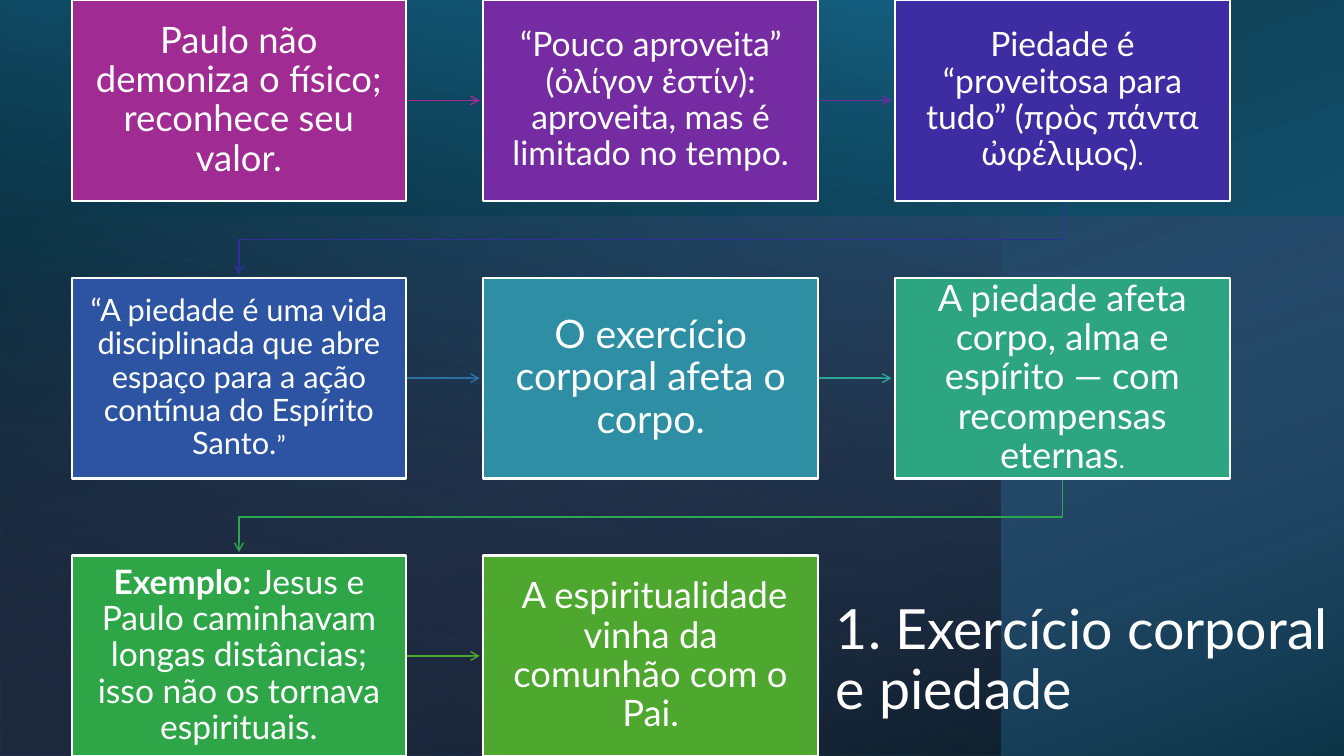
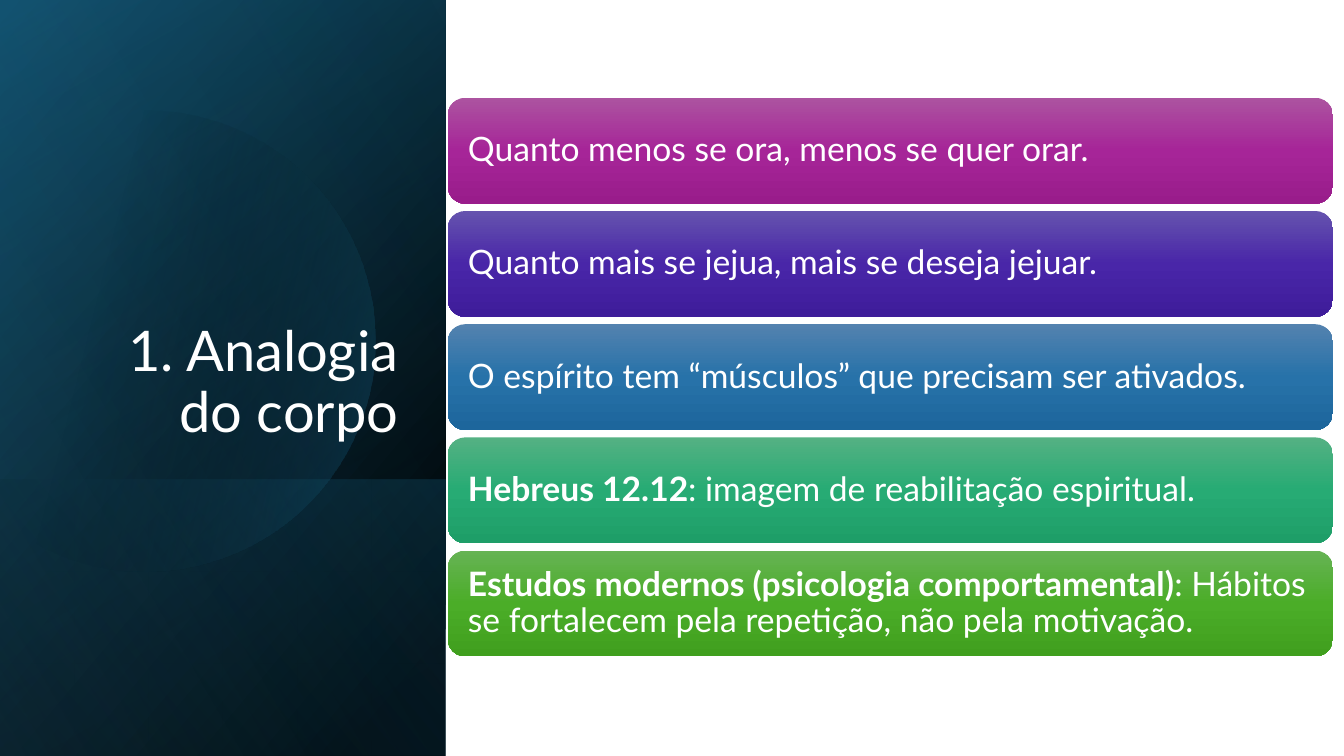
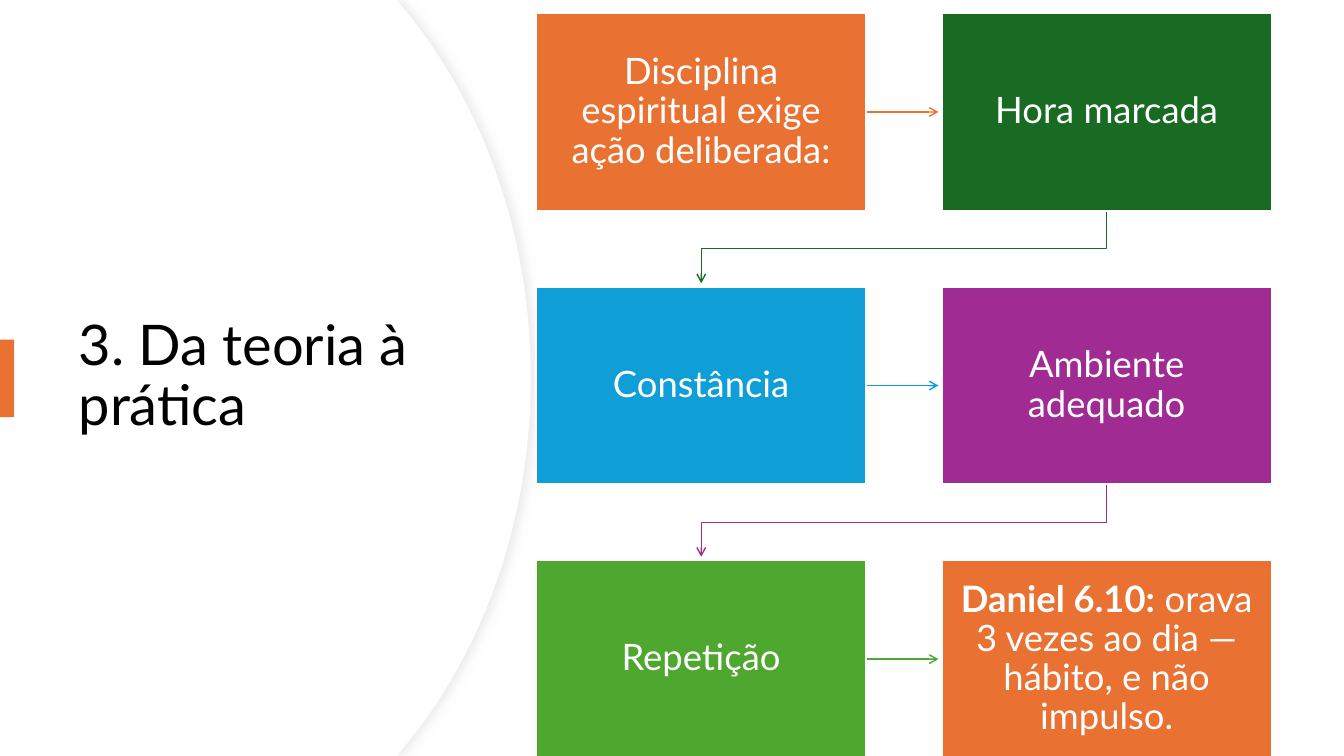
from lxml.etree import SubElement
from pptx import Presentation
from pptx.dml.color import RGBColor
from pptx.enum.shapes import MSO_CONNECTOR as Connector, MSO_SHAPE as Preset
from pptx.enum.text import MSO_ANCHOR as Anchor, MSO_AUTO_SIZE as AutoSize, PP_ALIGN as Align
from pptx.oxml.ns import qn
from pptx.util import Inches, Pt

FONT = "Lato"
CELL = 0.1
COLUMNS, ROWS = 133.3, 75
CURVE_STEPS = 24

WHITE = RGBColor(0xFF, 0xFF, 0xFF)
BLACK = RGBColor(0x00, 0x00, 0x00)
OCEAN = RGBColor(0x15, 0x60, 0x82)
DEEP_OCEAN = RGBColor(0x0B, 0x30, 0x41)
DARK_OCEAN = RGBColor(0x10, 0x48, 0x62)
PALE_SKY = RGBColor(0x46, 0xB1, 0xE1)
PINK = RGBColor(0xD8, 0x6E, 0xCC)
EDGE_GRAY = RGBColor(0xEF, 0xEF, 0xEF)
SHADOW_GRAY = RGBColor(0xD9, 0xD9, 0xD9)
ORANGE = RGBColor(0xE9, 0x71, 0x32)
FOREST = RGBColor(0x19, 0x6B, 0x24)
SKY = RGBColor(0x0F, 0x9E, 0xD5)
MAGENTA = RGBColor(0xA0, 0x2B, 0x93)
PURPLE = RGBColor(0x75, 0x2B, 0xA1)
INDIGO = RGBColor(0x3D, 0x2C, 0xA2)
BLUE = RGBColor(0x2C, 0x54, 0xA3)
TEAL = RGBColor(0x2D, 0x8E, 0xA4)
JADE = RGBColor(0x2D, 0xA5, 0x81)
EMERALD = RGBColor(0x2E, 0xA6, 0x48)
GREEN = RGBColor(0x4E, 0xA7, 0x2E)
PURPLE_ARROW = RGBColor(0x6C, 0x2B, 0xA1)
INDIGO_ARROW = RGBColor(0x2C, 0x2E, 0xA2)
BLUE_ARROW = RGBColor(0x2C, 0x71, 0xA4)
TEAL_ARROW = RGBColor(0x2D, 0xA5, 0x94)
JADE_ARROW = RGBColor(0x2D, 0xA6, 0x51)
MAGENTA_BAR = RGBColor(0xAC, 0x53, 0xA0), RGBColor(0xA6, 0x25, 0x98), RGBColor(0x99, 0x1C, 0x8B)
INDIGO_BAR = RGBColor(0x65, 0x53, 0xAE), RGBColor(0x49, 0x26, 0xA8), RGBColor(0x3E, 0x1C, 0x9A)
BLUE_BAR = RGBColor(0x53, 0x82, 0xAF), RGBColor(0x27, 0x72, 0xA9), RGBColor(0x1D, 0x66, 0x9C)
JADE_BAR = RGBColor(0x54, 0xB1, 0x83), RGBColor(0x27, 0xAB, 0x74), RGBColor(0x1E, 0x9E, 0x68)
GREEN_BAR = RGBColor(0x66, 0xB3, 0x54), RGBColor(0x4B, 0xAD, 0x28), RGBColor(0x40, 0x9F, 0x1E)


def cells(*counts):
    return [Inches(count * CELL) for count in counts]


def write(frame, *parts, size=24, color=WHITE, align=Align.LEFT, anchor=Anchor.MIDDLE, insets=(1, 0.5, 1, 0.5)):
    frame.word_wrap = True
    frame.auto_size = AutoSize.NONE
    frame.vertical_anchor = anchor
    frame.margin_left, frame.margin_top, frame.margin_right, frame.margin_bottom = cells(*insets)
    paragraph = frame.paragraphs[0]
    paragraph.alignment = align
    paragraph.line_spacing = 0.9
    for part in parts:
        text, changes = part if isinstance(part, tuple) else (part, {})
        for number, line in enumerate(text.split("\n")):
            if number:
                paragraph.add_line_break()
            run = paragraph.add_run()
            run.text = line
            run.font.name = FONT
            run.font.size = Pt(changes.get("size", size))
            run.font.bold = changes.get("bold", False)
            run.font.color.rgb = color


def add_color(parent, color, opacity):
    node = SubElement(parent, qn("a:srgbClr"), val=str(color))
    if opacity < 100:
        SubElement(node, qn("a:alpha"), val=str(opacity * 1000))


def curve(start, first, second, end):
    for step in range(1, CURVE_STEPS + 1):
        t = step / CURVE_STEPS
        weights = (1 - t) ** 3, 3 * t * (1 - t) ** 2, 3 * t ** 2 * (1 - t), t ** 3
        yield tuple(sum(weight * point[axis] for weight, point in zip(weights, (start, first, second, end)))
                    for axis in (0, 1))


class Deck:
    def __init__(self):
        self.presentation = Presentation()
        self.presentation.slide_width, self.presentation.slide_height = cells(COLUMNS, ROWS)
        self.slide = None

    def start_slide(self):
        self.slide = self.presentation.slides.add_slide(self.presentation.slide_layouts[5])

    def title(self, box, text, **style):
        shape = self.slide.shapes.title
        shape.left, shape.top, shape.width, shape.height = cells(*box)
        self.slide.shapes._spTree.append(shape._element)
        write(shape.text_frame, text, **{"size": 40, **style})

    def finish(self, shape, fill=None, line=None, line_width=1.5):
        shape.shadow.inherit = False
        if fill is None:
            shape.fill.background()
        else:
            shape.fill.solid()
            shape.fill.fore_color.rgb = fill
        if line is None:
            shape.line.fill.background()
        else:
            shape.line.color.rgb = line
            shape.line.width = Pt(line_width)
        return shape

    def box(self, box, fill=None, line=None, preset=Preset.RECTANGLE):
        return self.finish(self.slide.shapes.add_shape(preset, *cells(*box)), fill, line)

    def gradient(self, shape, angle, *stops):
        shape.fill.gradient()
        shape.fill.gradient_angle = 360 - angle
        stop_list = shape._element.spPr.find(qn("a:gradFill")).find(qn("a:gsLst"))
        stop_list.clear()
        for position, color, opacity in stops:
            add_color(SubElement(stop_list, qn("a:gs"), pos=str(position * 1000)), color, opacity)

    def wash(self, box, rotation, angle, *stops):
        left, top, width, height = box
        if rotation % 180:
            shift = (width - height) / 2
            left, top, width, height = left + shift, top - shift, height, width
        shape = self.box((left, top, width, height))
        shape.rotation = rotation
        shape._element.spPr.find(qn("a:xfrm")).set("flipH", "1")
        self.gradient(shape, angle, *stops)

    def outline(self, start, *segments, close=True, **style):
        points = [start]
        for segment in segments:
            points += curve(points[-1], *segment) if len(segment) == 3 else segment
        points = [cells(*point) for point in points]
        builder = self.slide.shapes.build_freeform(*points[0])
        builder.add_line_segments(points[1:], close=close)
        return self.finish(builder.convert_to_shape(), **style)

    def shadow(self, shape, color, opacity, blur, distance):
        effects = shape._element.spPr.find(qn("a:effectLst"))
        outer = SubElement(effects, qn("a:outerShdw"), blurRad=str(Pt(blur)), dist=str(Pt(distance)), dir="0")
        add_color(outer, color, opacity)

    def arrow(self, color, *points):
        if len(points) == 2:
            shape = self.slide.shapes.add_connector(Connector.STRAIGHT, *cells(*points[0], *points[1]))
            shape.line.color.rgb = color
            shape.line.width = Pt(1)
            SubElement(shape._element.spPr, qn("a:effectLst"))
        else:
            segments = [(point,) for point in points[1:]]
            shape = self.outline(points[0], *segments, close=False, line=color, line_width=1)
        SubElement(shape._element.spPr.find(qn("a:ln")), qn("a:tailEnd"), type="arrow")

    def flow(self, left, top, width, columns, steps):
        height, gap = width * 0.6, width * 0.23
        reach = gap - 0.35
        for number, (fill, arrow_color, size, *parts) in enumerate(steps):
            row, column = divmod(number, columns)
            x, y = left + column * (width + gap), top + row * (height + gap)
            right, bottom, middle = x + width, y + height, x + width / 2
            if number < len(steps) - 1:
                if column < columns - 1:
                    self.arrow(arrow_color, (right, y + height / 2), (right + reach, y + height / 2))
                else:
                    first = left + width / 2
                    turn = bottom + gap / 2
                    self.arrow(arrow_color, (middle, bottom), (middle, turn), (first, turn), (first, bottom + reach))
            shape = self.box((x, y, width, height), fill, WHITE)
            write(shape.text_frame, *parts, size=size, align=Align.CENTER, insets=(1.6, 1.7, 1.6, 1.7))

    def bars(self, left, top, width, height, pitch, entries):
        for number, (colors, *parts) in enumerate(entries):
            shape = self.box((left, top + number * pitch, width, height), preset=Preset.ROUNDED_RECTANGLE)
            self.gradient(shape, 90, *[(position, color, 100) for position, color in zip((0, 50, 100), colors)])
            write(shape.text_frame, *parts, insets=(1.5, 1.5, 1.5, 1.5))


def exercise_slide(deck):
    deck.start_slide()
    deck.wash((0, 0, COLUMNS, ROWS), 270, 200, (8, OCEAN, 100), (100, DEEP_OCEAN, 100))
    deck.wash((0, 0, 99.2, ROWS), 180, 80, (8, BLACK, 52), (100, OCEAN, 100))
    deck.wash((0, 21.5, COLUMNS, 53.5), 270, 20, (0, PINK, 0), (100, BLACK, 46))
    deck.title((81.9, 59, 51.4, 13.3), "1. Exercício corporal \ne piedade", size=39.6, insets=(1, 0.5, 0, 0.5))
    deck.flow(7.1, 0, 33.2, 3, [
        (MAGENTA, MAGENTA, 26, "Paulo não demoniza o físico; reconhece seu valor."),
        (PURPLE, PURPLE_ARROW, 24, "“Pouco aproveita” (ὀλίγον ἐστίν): aproveita, mas é limitado no tempo."),
        (INDIGO, INDIGO_ARROW, 24, "Piedade é “proveitosa para tudo” (πρὸς πάντα ὠφέλιμος)", (".", {"size": 18})),
        (BLUE, BLUE_ARROW, 22,
         "“A piedade é uma vida disciplinada que abre espaço para a ação contínua do Espírito Santo.",
         ("”", {"size": 18})),
        (TEAL, TEAL_ARROW, 28, "O exercício corporal afeta o corpo."),
        (JADE, JADE_ARROW, 26, "A piedade afeta corpo, alma e espírito — com recompensas eternas",
         (".", {"size": 18})),
        (EMERALD, GREEN, 24, ("Exemplo:", {"bold": True}),
         " Jesus e Paulo caminhavam longas distâncias; isso não os tornava espirituais."),
        (GREEN, GREEN, 26, " A espiritualidade vinha da comunhão com o Pai."),
    ])


def analogy_slide(deck):
    deck.start_slide()
    panel = (0, 0, 44.2, ROWS)
    deck.wash(panel, 90, 50, (8, BLACK, 100), (100, DARK_OCEAN, 100))
    deck.wash(panel, 90, 30, (0, BLACK, 0), (99, OCEAN, 46))
    deck.wash((0, 47.6, 44.2, 27.4), 90, 130, (2, OCEAN, 29), (100, BLACK, 30))
    disc = deck.outline(
        (14.9, 11), ((24.6, 11.2), (33.5, 17.7), (36.3, 27.5)), ((39.8, 39.7), (32.8, 52.3), (20.7, 55.8)),
        ((13.1, 58), (5.3, 56.1), (0, 51.4)), ((0, 16.1),), ((2.3, 14.2), (5, 12.8), (8, 11.9)),
        ((10.3, 11.3), (12.6, 11), (14.9, 11)))
    deck.gradient(disc, 14, (29, BLACK, 0), (100, OCEAN, 43))
    deck.wash(panel, 90, 120, (0, BLACK, 0), (99, PALE_SKY, 11))
    deck.title((6.4, 18.4, 34.1, 26.2), "1. Analogia do corpo", align=Align.RIGHT, anchor=Anchor.BOTTOM)
    deck.bars(44.4, 9.7, 87.8, 10.5, 11.23, [
        (MAGENTA_BAR, "Quanto menos se ora, menos se quer orar."),
        (INDIGO_BAR, "Quanto mais se jejua, mais se deseja jejuar."),
        (BLUE_BAR, "O espírito tem “músculos” que precisam ser ativados."),
        (JADE_BAR, ("Hebreus 12.12", {"bold": True}), ": imagem de reabilitação espiritual."),
        (GREEN_BAR, ("Estudos modernos (psicologia comportamental)", {"bold": True}),
         ": Hábitos se fortalecem pela repetição, não pela motivação."),
    ])


def practice_slide(deck):
    deck.start_slide()
    for edge, line in ((52.7, EDGE_GRAY), (52.6, None)):
        shoulder = edge - 12.6
        panel = deck.outline(
            (0, 0), ((39.4, 0),), ((shoulder, 0.8),),
            ((edge - 4.8, 10.2), (edge, 23.2), (edge, 37.5)),
            ((edge, 51.8), (edge - 4.8, 64.8), (shoulder, 74.2)),
            ((39.4, ROWS),), ((0, ROWS),), fill=WHITE, line=line, line_width=0.75)
        if line is not None:
            deck.shadow(panel, SHADOW_GRAY, 50, 7, 3)
    deck.title((6.8, 12.7, 39.4, 49.5), "3. Da teoria à prática", color=BLACK)
    deck.box((0, 33.7, 1.4, 7.7), ORANGE)
    deck.flow(53.2, 1.3, 32.7, 2, [
        (ORANGE, ORANGE, 26, "Disciplina espiritual exige ação deliberada:"),
        (FOREST, FOREST, 26, "Hora marcada"),
        (SKY, SKY, 26, "Constância"),
        (MAGENTA, MAGENTA, 26, "Ambiente adequado"),
        (GREEN, GREEN, 26, "Repetição"),
        (ORANGE, ORANGE, 26, ("Daniel 6.10:", {"bold": True}), " orava 3 vezes ao dia — hábito, e não impulso."),
    ])


def main():
    deck = Deck()
    exercise_slide(deck)
    analogy_slide(deck)
    practice_slide(deck)
    deck.presentation.save("out.pptx")


if __name__ == "__main__":
    main()
